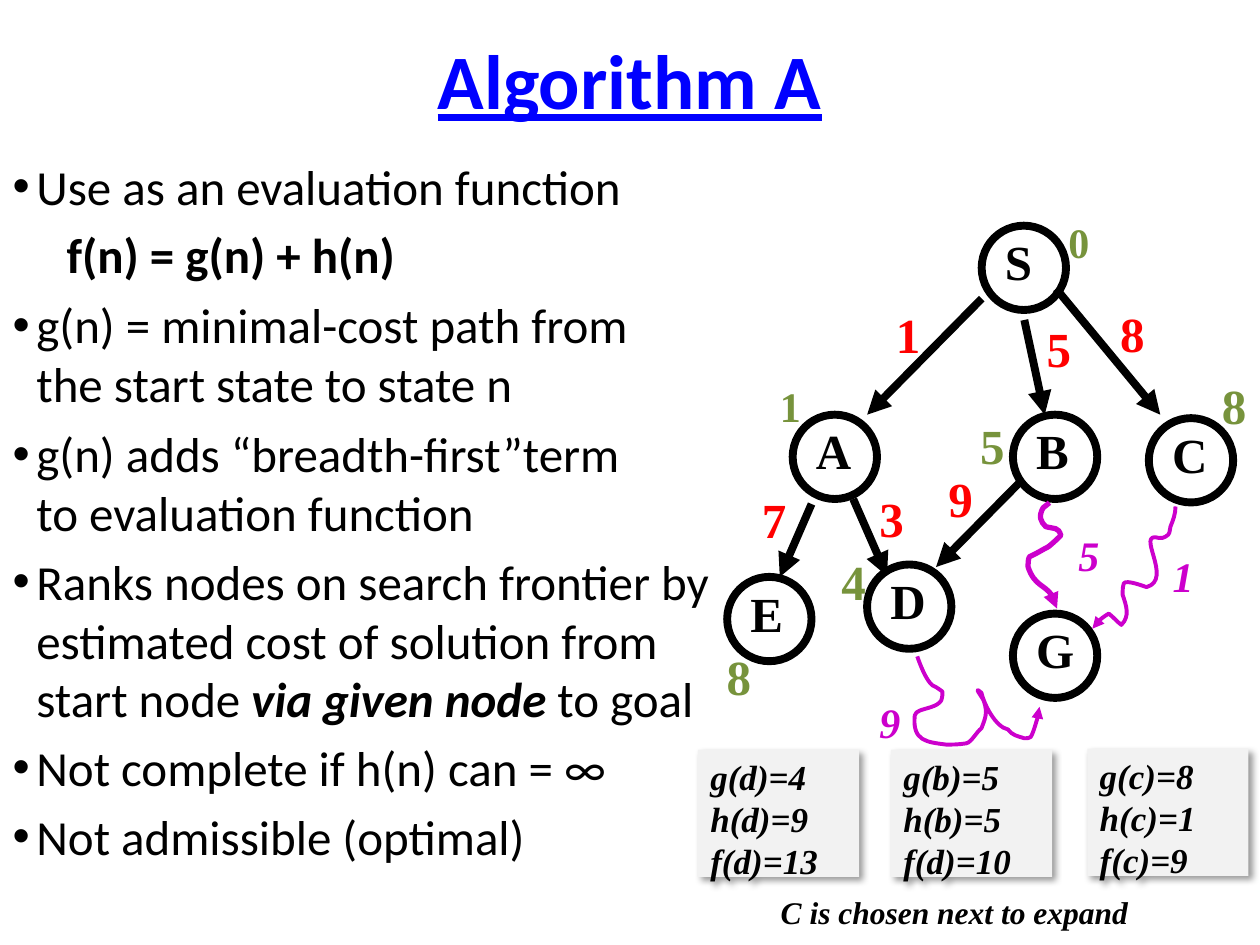
from dataclasses import dataclass

from lxml.etree import SubElement
from pptx import Presentation
from pptx.dml.color import RGBColor
from pptx.enum.shapes import MSO_CONNECTOR as Connector, MSO_SHAPE as Shape
from pptx.enum.text import MSO_ANCHOR as Anchor, MSO_AUTO_SIZE as AutoSize, PP_ALIGN as Align
from pptx.oxml.ns import qn
from pptx.util import Cm, Pt


@dataclass(frozen=True)
class Theme:
    heading_font: str = "Calibri"
    graph_font: str = "Times New Roman"
    title_color: str = "0000FF"
    ink: str = "000000"
    cost: str = "FF0000"
    heuristic: str = "77933C"
    route: str = "CC00CC"
    panel: str = "F2F2F2"
    title_size: int = 44
    large: int = 28
    medium: int = 24
    panel_size: int = 20
    caption_size: int = 18
    graph_line: float = 4.5


THEME = Theme()
NODE_SIZE = 1.7
CURVE_UNIT = Cm(0.0254)

BULLETS = [
    [("Use as an evaluation function", "")],
    [("f(n) = g(n) + h(n)", "b")],
    [("g(n) = minimal-cost path from\nthe start state to state n", "")],
    [("g(n) adds “breadth-first”term \nto evaluation function", "")],
    [("Ranks nodes on search frontier by estimated cost of solution from start node ", ""),
     ("via given node ", "bi"), ("to goal", "")],
    [("Not complete if h(n) can = ∞", "")],
    [("Not admissible (optimal)", "")],
]
FORMULA = 1

# name, left, top, label width
NODES = [
    ("S", 19.79, 4.55, 1.07), ("A", 15.98, 8.36, 1.22), ("B", 20.42, 8.36, 1.17),
    ("C", 23.16, 8.43, 1.22), ("D", 17.48, 11.38, 1.22), ("E", 14.66, 11.63, 1.17),
    ("G", 20.42, 12.37, 1.27),
]
# start, end, cost, position of the cost
EDGES = [
    ((19.79, 6.02), (17.48, 8.36), "1", (17.81, 6.02)),
    ((20.65, 6.45), (21.06, 8.36), "5", (20.85, 6.3)),
    ((21.29, 5.82), (23.39, 8.36), "8", (22.33, 5.99)),
    ((17.2, 10.06), (17.88, 11.61), "3", (17.48, 9.73)),
    ((20.55, 9.73), (18.87, 11.43), "9", (18.87, 9.32)),
    ((16.36, 10.16), (15.72, 11.63), "7", (15.11, 9.75)),
]
HEURISTICS = [
    ("0", 21.29, 4.24, THEME.medium), ("1", 15.47, 7.54, THEME.medium),
    ("4", 16.71, 11, THEME.large), ("5", 19.51, 8.26, THEME.large),
    ("8", 24.38, 7.44, THEME.large), ("8", 14.4, 12.9, THEME.large),
]
# Start point followed by three points for each Bézier segment, in curve units
ROUTE_B = [
    (833, 399), (831, 401), (829, 402), (828, 403), (824, 410), (826, 414), (830, 418),
    (837, 420), (840, 418), (842, 425), (842, 425), (836, 431), (832, 434),
    (828, 436), (825, 438), (821, 440), (820, 441), (818, 441), (817, 442),
    (816, 444), (816, 447), (816, 450), (821, 465), (836, 465), (839, 483),
]
ROUTE_C = [
    (933, 402), (933, 408), (931, 413), (929, 418), (928, 422), (929, 424), (925, 426),
    (924, 427), (922, 427), (920, 427), (900, 421), (932, 460), (910, 466),
    (907, 465), (894, 460), (892, 463), (891, 466), (891, 469), (891, 472),
    (894, 481), (897, 489), (890, 496), (886, 493), (884, 490), (880, 487),
    (880, 487), (875, 490), (873, 492), (870, 494), (869, 497), (867, 499),
]
ROUTE_D = [
    (728, 521), (730, 527), (735, 540), (740, 544), (743, 545), (748, 549), (748, 549),
    (748, 551), (748, 553), (747, 556), (744, 561), (735, 562), (730, 564),
    (728, 565), (726, 566), (726, 568), (724, 588), (735, 589), (751, 591),
    (756, 591), (761, 591), (767, 590), (771, 589), (775, 581), (779, 578),
    (782, 570), (784, 566), (781, 557), (781, 555), (771, 543), (779, 550),
    (781, 559), (790, 577), (800, 579), (804, 584), (807, 584), (813, 586),
    (815, 586), (817, 586), (818, 585), (820, 582), (823, 571), (824, 568),
    (824, 565), (825, 561), (825, 561),
]
ROUTES = [
    (ROUTE_B, 3, "5", (21.49, 10.54)),
    (ROUTE_C, 2.25, "1", (23.39, 10.97)),
    (ROUTE_D, 2.25, "9", (17.48, 13.92)),
]
PANELS = [
    (14.07, 15.11, ["g(d)=4", "h(d)=9", "f(d)=13"]),
    (17.96, 15.11, ["g(b)=5", "h(b)=5", "f(d)=10"]),
    (21.92, 15.09, ["g(c)=8", "h(c)=1", "f(c)=9"]),
]


class SlideBuilder:
    def __init__(self, slide, theme):
        self.slide, self.theme = slide, theme

    def add_run(self, paragraph, text, size, color, font, style=""):
        """Add text with line breaks; style may hold b, i and u."""
        for index, line in enumerate(text.split("\n")):
            if index:
                paragraph.add_line_break()
            run = paragraph.add_run()
            run.text = line
            run.font.name, run.font.size = font, Pt(size)
            run.font.color.rgb = RGBColor.from_string(color)
            run.font.bold, run.font.italic = "b" in style, "i" in style
            run.font.underline = "u" in style

    def place(self, shape, left, top, width, height):
        shape.left, shape.top, shape.width, shape.height = map(Cm, (left, top, width, height))

    def title(self, text):
        shape = self.slide.shapes.title
        self.place(shape, 1.9, 0, 21.59, 3.18)
        paragraph = shape.text_frame.paragraphs[0]
        paragraph.alignment = Align.CENTER
        self.add_run(paragraph, text, self.theme.title_size, self.theme.title_color,
                     self.theme.heading_font, "bu")

    def bullets(self, items):
        shape = self.slide.placeholders[1]
        self.place(shape, 0, 3.02, 15.24, 13.84)
        frame = shape.text_frame
        frame.auto_size = AutoSize.NONE
        for index, runs in enumerate(items):
            paragraph = frame.paragraphs[0] if index == 0 else frame.add_paragraph()
            properties = paragraph._p.get_or_add_pPr()
            is_formula = index == FORMULA
            paragraph.level = int(is_formula)
            properties.set("marL", str(Cm(1.57 if is_formula else 0.48)))
            properties.set("indent", str(-Cm(0.48)))
            if is_formula:
                SubElement(properties, qn("a:buNone"))
            for text, style in runs:
                self.add_run(paragraph, text, self.theme.large, self.theme.ink,
                             self.theme.heading_font, style)

    def label(self, text, left, top, color, size, style="b", width=1.02):
        height = 1.45 if size == self.theme.large else 1.27
        box = self.slide.shapes.add_textbox(Cm(left), Cm(top), Cm(width), Cm(height))
        box.text_frame.word_wrap = False
        box.text_frame.auto_size = AutoSize.SHAPE_TO_FIT_TEXT
        self.add_run(box.text_frame.paragraphs[0], text, size, color, self.theme.graph_font, style)

    def outline(self, shape, color, width, arrow=False):
        shape.line.width = Pt(width)
        shape.line.fill.solid()
        shape.line.color.rgb = RGBColor.from_string(color)
        if arrow:
            SubElement(shape._element.spPr.find(qn("a:ln")), qn("a:tailEnd"), type="triangle")

    def node(self, name, left, top, label_width):
        circle = self.slide.shapes.add_shape(Shape.OVAL, Cm(left), Cm(top),
                                             Cm(NODE_SIZE), Cm(NODE_SIZE))
        circle.shadow.inherit = False
        circle.fill.background()
        self.outline(circle, self.theme.ink, self.theme.graph_line)
        self.label(name, left + 0.22, top, self.theme.ink, self.theme.large, width=label_width)

    def edge(self, start, end):
        line = self.slide.shapes.add_connector(Connector.STRAIGHT, *map(Cm, start + end))
        self.outline(line, self.theme.ink, self.theme.graph_line, arrow=True)
        SubElement(line._element.spPr, qn("a:effectLst"))

    def curve(self, points, width):
        """Draw a freeform whose points are taken in threes as Bézier segments."""
        builder = self.slide.shapes.build_freeform(*points[0], scale=CURVE_UNIT)
        builder.add_line_segments(points[1:], close=False)
        shape = builder.convert_to_shape()
        shape.shadow.inherit = False
        shape.fill.background()
        self.outline(shape, self.theme.route, width, arrow=True)
        track = next(shape._element.iter(qn("a:path")))
        segments = track.findall(qn("a:lnTo"))
        for index in range(0, len(segments), 3):
            bezier = SubElement(track, qn("a:cubicBezTo"))
            for segment in segments[index:index + 3]:
                bezier.append(segment[0])
                track.remove(segment)

    def panel(self, left, top, lines):
        box = self.slide.shapes.add_shape(Shape.RECTANGLE, Cm(left), Cm(top), Cm(3.25), Cm(2.57))
        box.fill.solid()
        box.fill.fore_color.rgb = RGBColor.from_string(self.theme.panel)
        box.line.fill.background()
        box.shadow.inherit = False
        effects = box._element.spPr.find(qn("a:effectLst"))
        shadow = SubElement(effects, qn("a:outerShdw"), blurRad=str(Pt(4)), dist=str(Pt(3)),
                            dir="2700000", algn="tl", rotWithShape="0")
        color = SubElement(shadow, qn("a:srgbClr"), val=self.theme.ink)
        SubElement(color, qn("a:alpha"), val="40000")
        frame = box.text_frame
        frame.word_wrap, frame.vertical_anchor = True, Anchor.TOP
        for index, line in enumerate(lines):
            paragraph = frame.paragraphs[0] if index == 0 else frame.add_paragraph()
            paragraph.alignment = Align.LEFT
            self.add_run(paragraph, line, self.theme.panel_size, self.theme.ink,
                         self.theme.graph_font, "bi")

    def caption(self, text):
        box = self.slide.shapes.add_textbox(Cm(14.96), Cm(18.03), Cm(8.56), Cm(0.79))
        box.text_frame.word_wrap = True
        paragraph = box.text_frame.paragraphs[0]
        paragraph.alignment, paragraph.line_spacing = Align.CENTER, 0.8
        self.add_run(paragraph, text, self.theme.caption_size, self.theme.ink,
                     self.theme.graph_font, "bi")


def main():
    presentation = Presentation()
    presentation.slide_width, presentation.slide_height = Cm(25.4), Cm(19.05)
    builder = SlideBuilder(presentation.slides.add_slide(presentation.slide_layouts[1]), THEME)
    builder.title("Algorithm A")
    builder.bullets(BULLETS)
    for node in NODES:
        builder.node(*node)
    for start, end, cost, position in EDGES:
        builder.edge(start, end)
        builder.label(cost, *position, THEME.cost, THEME.large)
    for value, left, top, size in HEURISTICS:
        builder.label(value, left, top, THEME.heuristic, size)
    for points, width, cost, position in ROUTES:
        builder.curve(points, width)
        builder.label(cost, *position, THEME.route, THEME.medium, "bi", width=0.94)
    for panel in PANELS:
        builder.panel(*panel)
    builder.caption("C is chosen next to expand")
    presentation.save("out.pptx")


if __name__ == "__main__":
    main()
